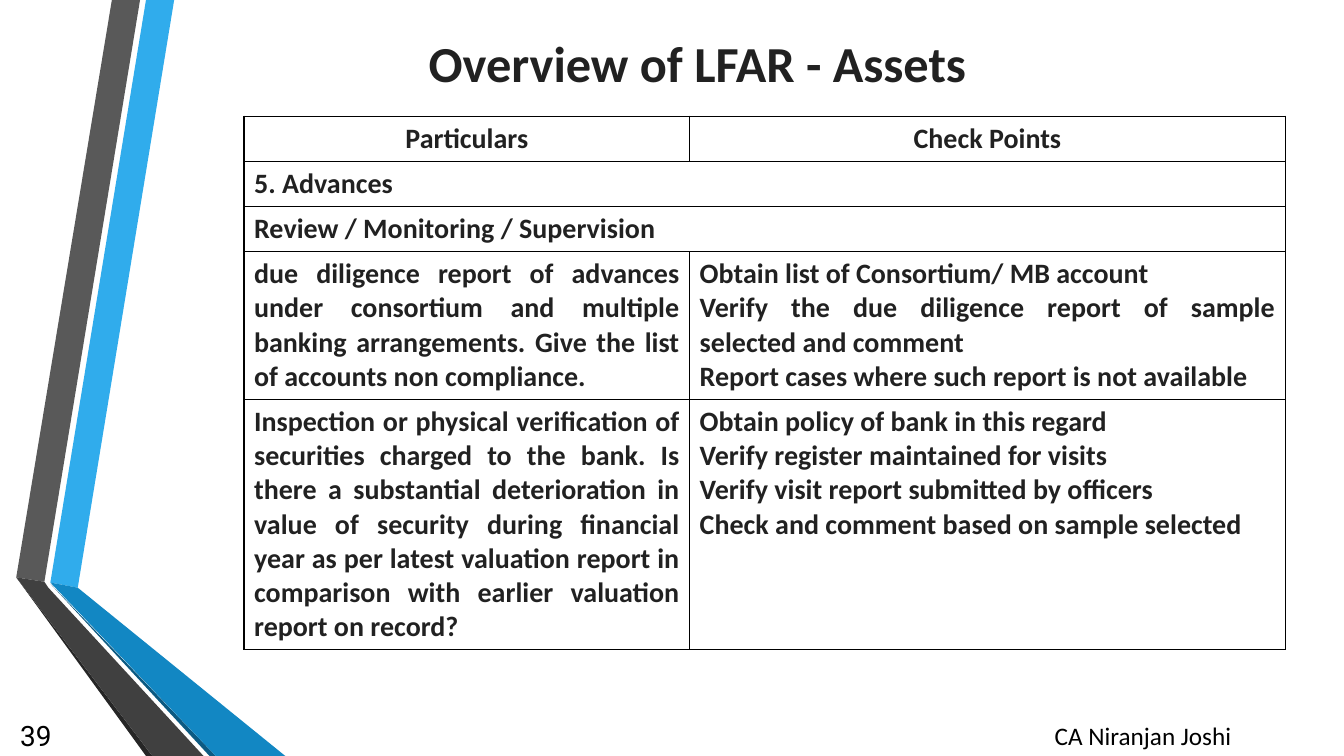
import dataclasses
import pptx
import pptx.dml.color
import pptx.enum.text
import pptx.oxml
import pptx.oxml.ns
import pptx.util

Cm = pptx.util.Cm
Pt = pptx.util.Pt
ALIGN = pptx.enum.text.PP_ALIGN
ANCHOR = pptx.enum.text.MSO_ANCHOR


@dataclasses.dataclass(frozen=True)
class Theme:
    """Colours, fonts and type sizes of the deck."""
    paper: str = "FFFFFF"
    ink: str = "212121"
    black: str = "000000"
    sky: str = "30ACEC"
    blue: str = "1287C3"
    navy: str = "0C5A82"
    grey: str = "595959"
    coal: str = "404040"
    soot: str = "262626"
    font: str = "Calibri"
    digit: str = "Roboto"
    head: int = 36
    body: int = 20
    foot: int = 18
    rule: int = 1


THEME = Theme()

BANDS = [
    (THEME.sky, [(0.86, 14.68), (1.55, 14.81), (3.98, 0), (3.27, 0)]),
    (THEME.grey, [(3.12, 0), (2.41, 0), (0, 14.55), (0.71, 14.66)]),
    (THEME.soot, [(0, 14.55), (3.27, 19.05), (3.43, 19.05)]),
    (THEME.navy, [(0.86, 14.71), (4.87, 19.05), (5.03, 19.05)]),
    (THEME.blue, [(0.86, 14.68), (5.03, 19.05), (6.78, 19.05), (1.55, 14.81)]),
    (THEME.coal, [(0, 14.55), (3.43, 19.05), (4.72, 19.05), (0.81, 14.81),
                  (0.71, 14.66)]),
]

COLS = [11.23, 15.01]
ROWS = [
    (1.14, ALIGN.CENTER, ["Particulars", "Check Points"]),
    (1.14, ALIGN.LEFT, ["5. Advances"]),
    (1.14, ALIGN.LEFT, ["Review / Monitoring / Supervision"]),
    (3.72, ALIGN.JUSTIFY, [
        "due diligence report of advances under consortium and multiple "
        "banking arrangements. Give the list of accounts non compliance.",
        "Obtain list of Consortium/ MB account\n"
        "Verify the due diligence report of sample selected and comment\n"
        "Report cases where such report is not available"]),
    (6.3, ALIGN.JUSTIFY, [
        "Inspection or physical verification of securities charged to the "
        "bank. Is there a substantial deterioration in value of security "
        "during financial year as per latest valuation report in comparison "
        "with earlier valuation report on record?",
        "Obtain policy of bank in this regard\n"
        "Verify register maintained for visits\n"
        "Verify visit report submitted by officers\n"
        "Check and comment based on sample selected"]),
]


def tint(code):
    """Return the colour for a hex code."""
    return pptx.dml.color.RGBColor.from_string(code)


def style(frame, size, align, color, font=THEME.font, bold=False):
    """Format every run in a text frame."""
    for para in frame.paragraphs:
        para.alignment = align
        for run in para.runs:
            run.font.name = font
            run.font.size = Pt(size)
            run.font.bold = bold
            run.font.color.rgb = tint(color)


def label(slide, box, text, anchor, *look, **more):
    """Place one text box."""
    frame = slide.shapes.add_textbox(*map(Cm, box)).text_frame
    frame.word_wrap = True
    frame.vertical_anchor = anchor
    frame.text = text
    style(frame, *look, **more)


def ribbon(slide, left, top):
    """Draw the folded ribbons from a corner point."""
    for color, spots in BANDS:
        spots = [(Cm(left + x), Cm(top + y)) for x, y in spots]
        pen = slide.shapes.build_freeform(*spots[0])
        pen.add_line_segments(spots[1:], close=True)
        band = pen.convert_to_shape()
        band.shadow.inherit = False
        band.fill.solid()
        band.fill.fore_color.rgb = tint(color)
        band.line.fill.background()


def edge(cell):
    """Fill a cell and rule its four sides."""
    cell.fill.solid()
    cell.fill.fore_color.rgb = tint(THEME.paper)
    props = cell._tc.get_or_add_tcPr()
    for spot, side in enumerate("LRTB"):
        props.insert(spot, pptx.oxml.parse_xml(
            f'<a:ln{side} {pptx.oxml.ns.nsdecls("a")} w="{Pt(THEME.rule)}">'
            f'<a:solidFill><a:srgbClr val="{THEME.black}"/></a:solidFill>'
            f'</a:ln{side}>'))


def grid(slide, left, top):
    """Build the table of particulars and check points."""
    tall = sum(row[0] for row in ROWS)
    box = map(Cm, (left, top, sum(COLS), tall))
    table = slide.shapes.add_table(len(ROWS), len(COLS), *box).table
    table.first_row = table.horz_banding = False
    for col, wide in zip(table.columns, COLS):
        col.width = Cm(wide)
    for r, (high, align, texts) in enumerate(ROWS):
        table.rows[r].height = Cm(high)
        for c in range(len(COLS)):
            edge(table.cell(r, c))
        if len(texts) == 1:
            table.cell(r, 0).merge(table.cell(r, len(COLS) - 1))
        for c, text in enumerate(texts):
            frame = table.cell(r, c).text_frame
            frame.text = text
            style(frame, THEME.body, align, THEME.ink, bold=True)


def footer(slide, left, top, high):
    """Place the page number and the speaker's name."""
    label(slide, (left, top, 1.52, high), "39", ANCHOR.MIDDLE,
          THEME.body, ALIGN.RIGHT, THEME.black, font=THEME.digit)
    label(slide, (left + 24.33, top, 8.89, high), "CA Niranjan Joshi",
          ANCHOR.TOP, THEME.foot, ALIGN.CENTER, THEME.black)


def main():
    """Build and save the slide."""
    deck = pptx.Presentation()
    deck.slide_width, deck.slide_height = Cm(33.87), Cm(19.05)
    slide = deck.slides.add_slide(deck.slide_layouts[6])
    ribbon(slide, 0.41, 0)
    label(slide, (6.15, 0.64, 22.86, 1.88), "Overview of LFAR - Assets",
          ANCHOR.MIDDLE, THEME.head, ALIGN.CENTER, THEME.ink, bold=True)
    grid(slide, 6.15, 2.93)
    footer(slide, 0.03, 18.03, 1.02)
    deck.save("out.pptx")


if __name__ == "__main__":
    main()
